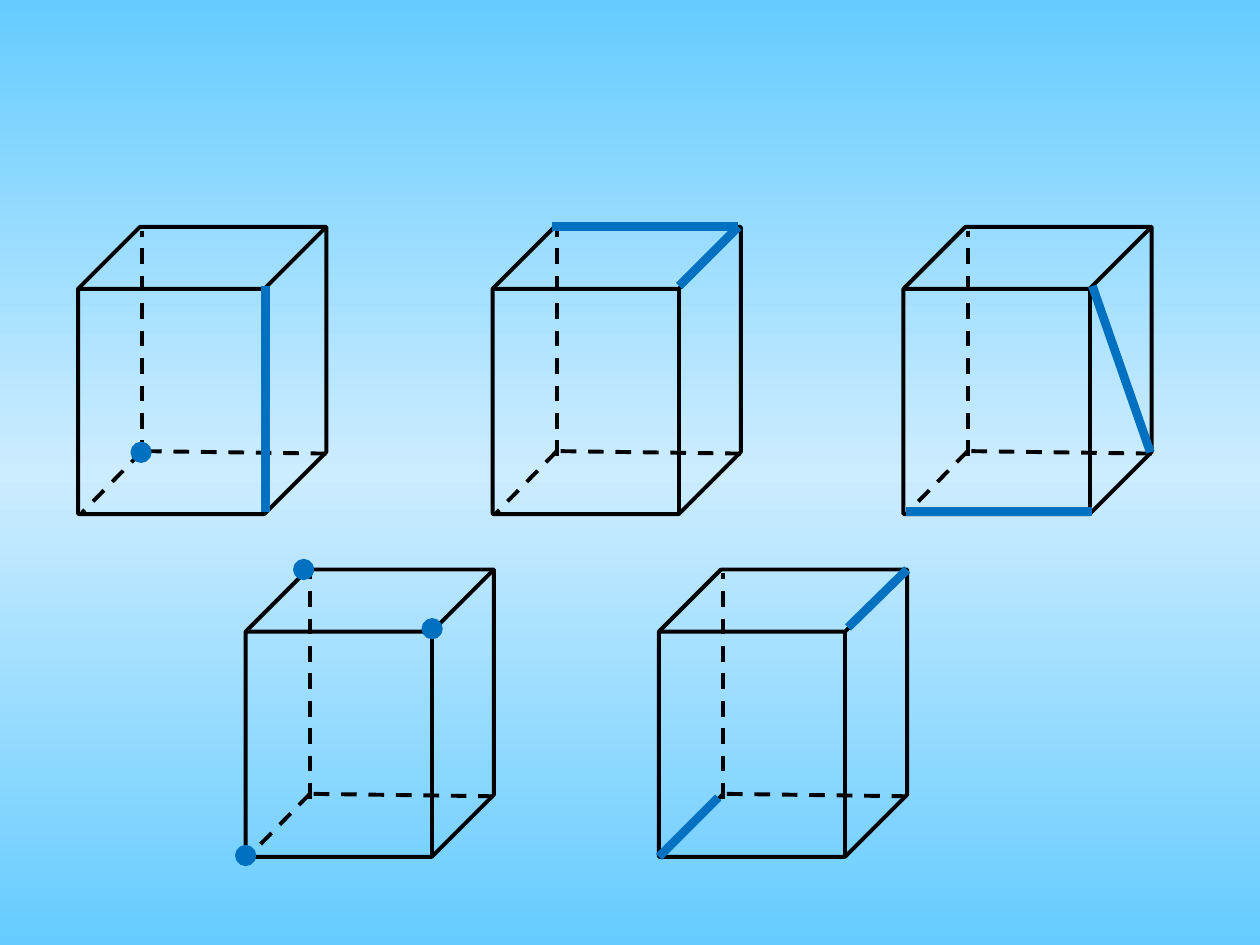
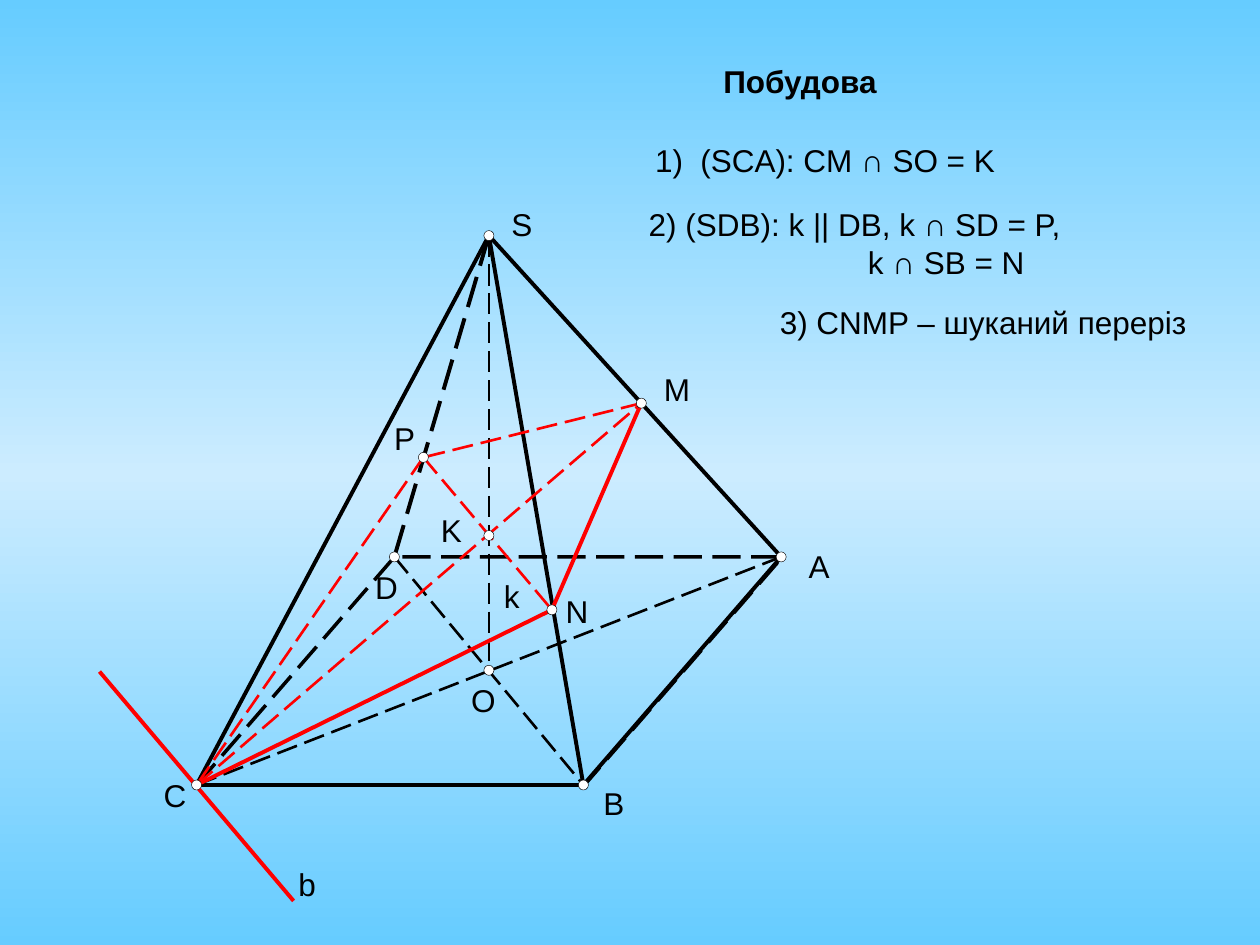
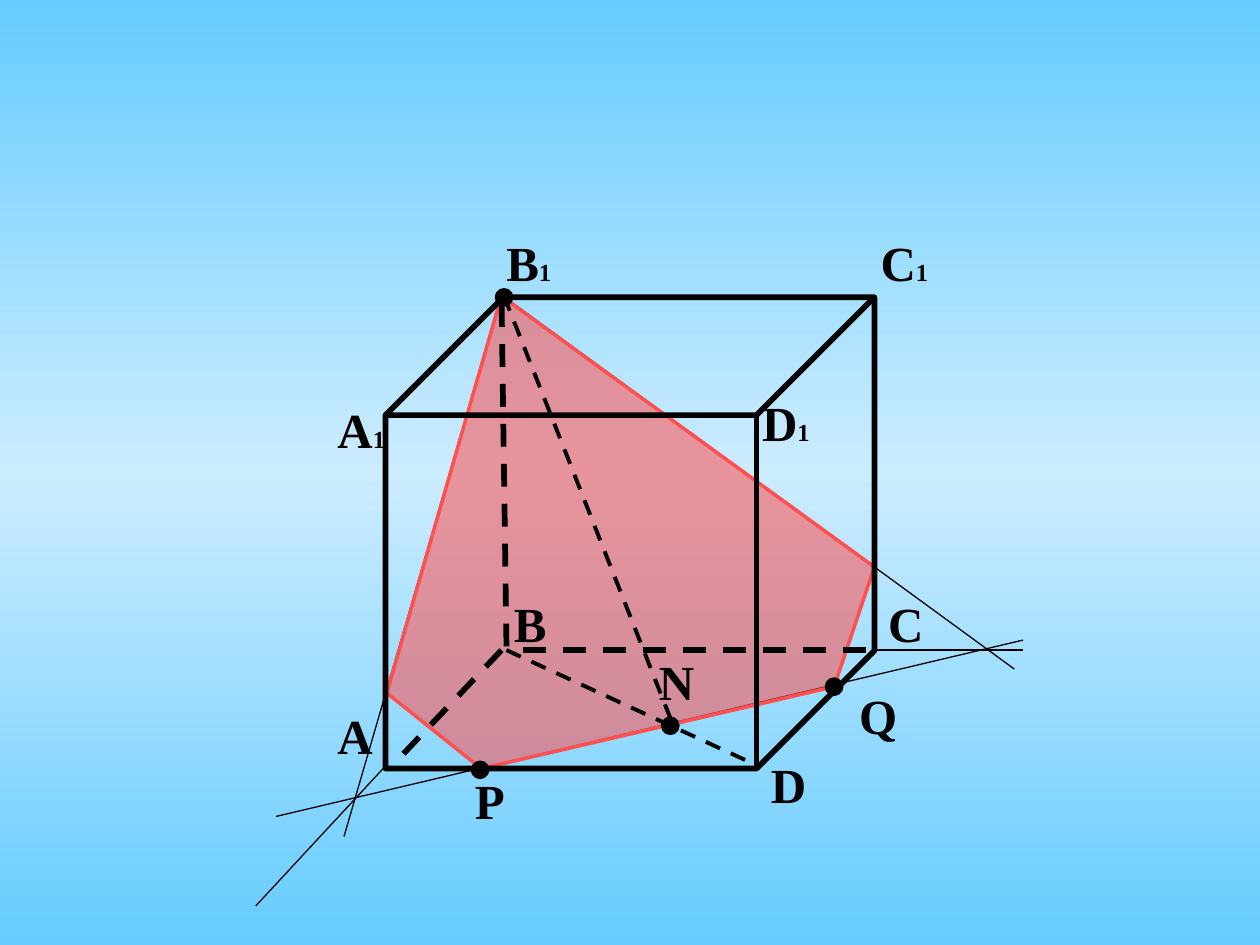
from copy import deepcopy
from pptx import Presentation
from pptx.dml.color import RGBColor
from pptx.enum.dml import MSO_LINE
from pptx.enum.shapes import MSO_CONNECTOR, MSO_SHAPE
from pptx.enum.text import MSO_ANCHOR, MSO_AUTO_SIZE, PP_ALIGN
from pptx.oxml.ns import qn
from pptx.util import Inches, Pt

BLACK, WHITE, RED, BLUE = "000000", "FFFFFF", "FF0000", "0070C0"
CORAL, SKY, PALE = "FF5050", "66CCFF", "CCECFF"
DASH, LONG = MSO_LINE.DASH, MSO_LINE.LONG_DASH
TITLE, BLANK = 5, 6


def paint(code):
    return RGBColor.from_string(code)


class Deck:
    def __init__(self):
        self.file = Presentation()
        self.file.slide_width, self.file.slide_height = Inches(10), Inches(7.5)
        self.slide = None
        self.sky()

    def sky(self):
        """Vertical gradient shared by all slides."""
        master = self.file.slide_master
        fill = master.background.fill
        fill.gradient()
        fill.gradient_angle = 270
        stops = master.element.xpath("./p:cSld/p:bg//a:gsLst")[0]
        stops.insert(1, deepcopy(stops[0]))
        for stop, spot, code in zip(fill.gradient_stops, (0, 0.5, 1), (SKY, PALE, SKY)):
            stop.position = spot
            stop.color.rgb = paint(code)

    def page(self, layout=BLANK):
        self.slide = self.file.slides.add_slide(self.file.slide_layouts[layout])

    def stroke(self, line, code, width, dash=None):
        line.color.rgb = paint(code)
        line.width = Pt(width)
        if dash:
            line.dash_style = dash

    def line(self, start, end, code=BLACK, width=2.25, dash=None):
        ends = [Inches(n) for n in (*start, *end)]
        edge = self.slide.shapes.add_connector(MSO_CONNECTOR.STRAIGHT, *ends)
        self.stroke(edge.line, code, width, dash)
        props = edge.element.spPr
        props.append(props.makeelement(qn("a:effectLst"), {}))

    def shape(self, kind, box, fill=None, code=BLACK, width=2.25, dash=None):
        item = self.slide.shapes.add_shape(kind, *[Inches(n) for n in box])
        item.shadow.inherit = False
        if fill:
            item.fill.solid()
            item.fill.fore_color.rgb = paint(fill)
        else:
            item.fill.background()
        self.stroke(item.line, code, width, dash)
        return item

    def dot(self, spot, size, fill, code, width):
        x, y = spot
        box = (x - size / 2, y - size / 2, size, size)
        self.shape(MSO_SHAPE.OVAL, box, fill, code, width)

    def cube(self, box, hidden, width):
        x, y = box[:2]
        for a, b, c, d in hidden:
            self.line((x + a, y + b), (x + c, y + d), width=width, dash=DASH)
        self.shape(MSO_SHAPE.CUBE, box, width=width)

    def area(self, spots, code, alpha):
        first, *rest = [(Inches(x), Inches(y)) for x, y in spots]
        maker = self.slide.shapes.build_freeform(*first)
        maker.add_line_segments(rest, close=True)
        item = maker.convert_to_shape()
        item.shadow.inherit = False
        item.fill.solid()
        item.fill.fore_color.rgb = paint(code)
        tint = item.element.spPr.find(qn("a:solidFill"))[0]
        tint.append(tint.makeelement(qn("a:alpha"), {"val": str(alpha * 1000)}))
        self.stroke(item.line, code, 2)

    def style(self, run, size, face, bold):
        font = run.font
        font.size, font.name, font.bold = Pt(size), face, bold
        font.color.rgb = paint(BLACK)

    def text(self, box, words, size=18, face="Arial", bold=False, wrap=True):
        item = self.slide.shapes.add_textbox(*[Inches(n) for n in box])
        frame = item.text_frame
        frame.word_wrap = wrap
        frame.auto_size = MSO_AUTO_SIZE.SHAPE_TO_FIT_TEXT
        frame.text = words
        for para in frame.paragraphs:
            for run in para.runs:
                self.style(run, size, face, bold)
        return frame

    def indent(self, para, left, first=0):
        props = para._p.get_or_add_pPr()
        props.set("marL", str(Inches(left)))
        props.set("indent", str(Inches(first)))

    def title(self, box, words):
        item = self.slide.shapes.title
        item.left, item.top, item.width, item.height = [Inches(n) for n in box]
        frame = item.text_frame
        frame.text = words
        frame.vertical_anchor = MSO_ANCHOR.TOP
        frame.auto_size = MSO_AUTO_SIZE.NONE
        para = frame.paragraphs[0]
        para.alignment = PP_ALIGN.LEFT
        self.style(para.runs[0], 18, "Arial", True)

    def mark(self, x, y, width, name, digit=""):
        """Bold vertex name, with a small digit if given."""
        frame = self.text((x, y, width, 0.57), name, 28, "Times New Roman", True, False)
        if digit:
            run = frame.paragraphs[0].add_run()
            run.text = digit
            self.style(run, 14, "Times New Roman", True)


def cubes(deck):
    deck.page()
    hidden = [(1.97, 1.8, 0.49, 1.78), (0.51, 1.78, 0.03, 2.27), (0.51, 1.82, 0.51, 0.03)]
    # Cube corner, then highlighted lines and dots measured from that corner
    tasks = [
        (0.62, 1.8, [(1.49, 0.47, 1.49, 2.26)], [(0.5, 1.79)]),
        (3.91, 1.8, [(1.95, 0, 0.47, 0), (1.95, 0, 1.48, 0.47)], []),
        (7.17, 1.8, [(0.02, 2.26, 1.5, 2.26), (1.5, 0.47, 1.96, 1.79)], []),
        (1.95, 4.52, [], [(0, 2.27), (0.46, 0), (1.48, 0.47)]),
        (5.23, 4.52, [(0.47, 1.81, 0, 2.28), (1.97, 0, 1.5, 0.46)], []),
    ]
    for x, y, lines, dots in tasks:
        deck.cube((x, y, 1.97, 2.28), hidden, 2.25)
        for a, b, c, d in lines:
            deck.line((x + a, y + b), (x + c, y + d), BLUE, 5)
        for a, b in dots:
            deck.dot((x + a, y + b), 0.14, BLUE, BLUE, 2)


def pyramid(deck):
    deck.page(TITLE)
    deck.title((5.64, 0.44, 4.08, 0.4), "Побудова")
    spots = {
        "S": (3.88, 1.87), "A": (6.2, 4.42), "B": (4.63, 6.23), "C": (1.56, 6.23),
        "D": (3.13, 4.42), "O": (3.88, 5.32), "K": (3.88, 4.25), "M": (5.09, 3.2),
        "N": (4.38, 4.84), "P": (3.36, 3.63),
    }

    # Base, edges and section, grouped by line style
    base = deck.shape(MSO_SHAPE.PARALLELOGRAM, (1.56, 4.42, 4.65, 1.81), width=2, dash=LONG)
    base.adjustments[0] = 0.868
    groups = [
        ("CA DB SO", BLACK, 1.5, LONG),
        ("SD", BLACK, 2.25, LONG),
        ("SC CB BA SA SB", BLACK, 2.25, None),
        ("CM PN MP PC", RED, 1.5, LONG),
        ("CN NM", RED, 2.25, None),
    ]
    for pairs, code, width, dash in groups:
        for a, b in pairs.split():
            deck.line(spots[a], spots[b], code, width, dash)
    deck.line((0.79, 5.33), (2.33, 7.15), RED)
    for spot in spots.values():
        deck.dot(spot, 0.08, WHITE, BLACK, 0.25)

    # Names of points and lines
    names = {
        "C": (1.2, 6.11), "b": (2.27, 6.82), "B": (4.69, 6.17), "O": (3.64, 5.36),
        "D": (2.88, 4.46), "A": (6.32, 4.29), "S": (3.96, 1.58), "M": (5.17, 2.89),
        "N": (4.39, 4.65), "P": (3.03, 3.28), "K": (3.4, 4.01), "k": (3.9, 4.53),
    }
    for name, (x, y) in names.items():
        deck.text((x, y, 0.47, 0.4), name)

    # Steps
    first = deck.text((5.1, 1.07, 4.62, 0.4), "1)\t(SCA): CM ∩ SO = K")
    deck.indent(first.paragraphs[0], 0.36, -0.36)
    second = deck.text((5.05, 1.58, 4.62, 0.71),
                       "2) (SDB): k || DB, k ∩ SD = P,\nk ∩ SB = N")
    deck.indent(second.paragraphs[1], 1.74)
    deck.text((6.09, 2.36, 3.58, 0.4), "3) CNMP – шуканий переріз")


def section(deck):
    deck.page()
    top, p, q, n = (4, 2.36), (3.81, 6.11), (6.62, 5.45), (5.32, 5.76)

    # Traces and section
    for start, end in [((3.98, 2.34), (2.73, 6.64)), ((2.19, 6.48), (8.12, 5.08)),
                       ((3.98, 2.34), (8.05, 5.31))]:
        deck.line(start, end, width=0.75)
    deck.area([(3.98, 2.35), (3.07, 5.5), (3.82, 6.1), (6.62, 5.45), (6.94, 4.5)], CORAL, 56)

    # Cube
    hidden = [(3.81, 2.8, 1, 2.8), (0.92, 2.8, 0.05, 3.72), (0.96, 2.77, 0.92, -0.02)]
    deck.cube((3.06, 2.36, 3.88, 3.74), hidden, 3.25)

    # Extended edges and diagonals
    deck.line((3.05, 6.09), (2.03, 7.19), width=0.75)
    deck.line((6.95, 5.16), (8.12, 5.16), width=0.75)
    deck.line((4.02, 5.16), (6.02, 6.08), dash=DASH)
    deck.line((4, 2.35), (5.36, 5.8), dash=DASH)

    # Points and names
    for spot in (top, p, q, n):
        deck.dot(spot, 0.12, BLACK, BLACK, 2)
    for label in [
        (2.58, 5.55, 0.49, "А"), (3.98, 4.66, 0.46, "В"),
        (6.95, 4.66, 0.49, "С"), (6.02, 5.94, 0.49, "D"),
        (3.67, 6.07, 0.44, "P"), (6.72, 5.39, 0.51, "Q"), (5.13, 5.12, 0.49, "N"),
        (2.58, 3.12, 0.58, "А", "1"), (3.92, 1.8, 0.56, "В", "1"),
        (6.89, 1.8, 0.58, "С", "1"), (5.95, 3.07, 0.58, "D", "1"),
    ]:
        deck.mark(*label)


def main():
    deck = Deck()
    cubes(deck)
    pyramid(deck)
    section(deck)
    deck.file.save("out.pptx")


if __name__ == "__main__":
    main()
